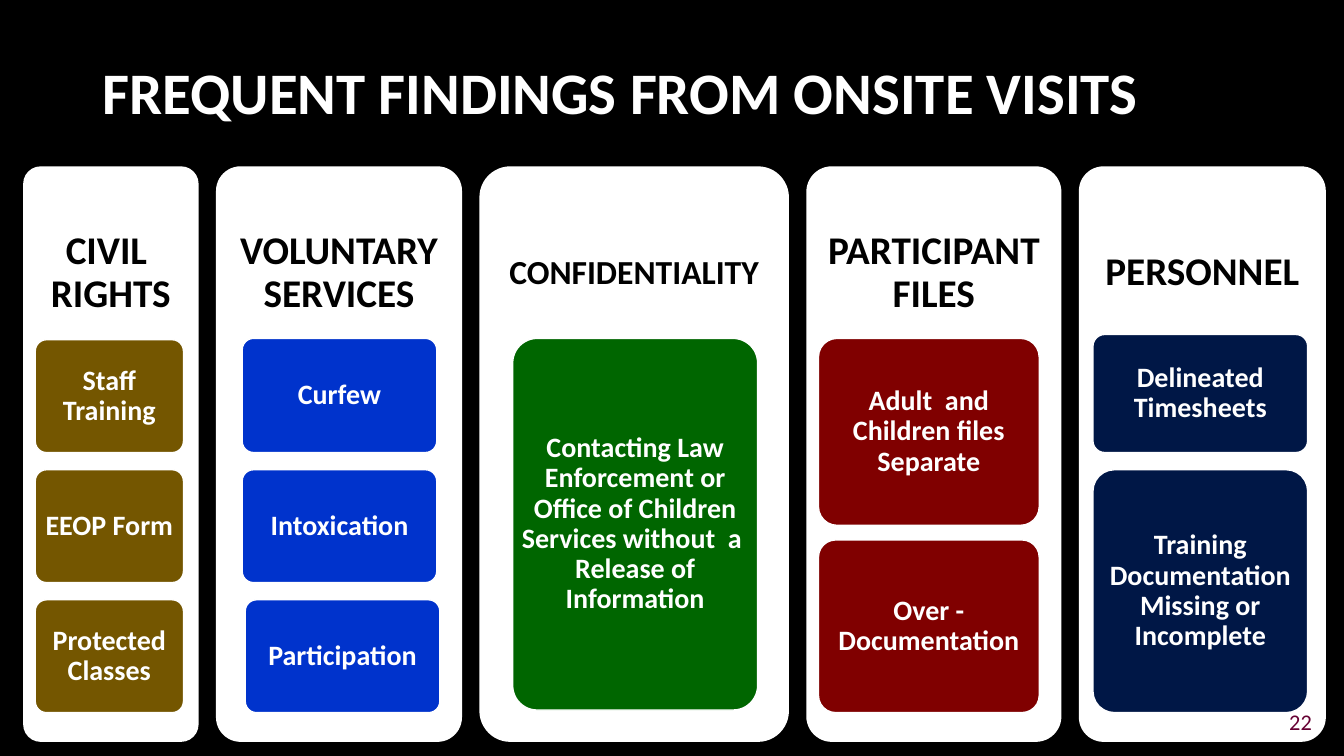
from pptx import Presentation
from pptx.dml.color import RGBColor
from pptx.enum.shapes import MSO_SHAPE
from pptx.enum.text import MSO_ANCHOR, PP_ALIGN
from pptx.util import Inches, Pt

ROUND = MSO_SHAPE.ROUNDED_RECTANGLE
MIDDLE = MSO_ANCHOR.MIDDLE
LEFT, CENTER, RIGHT = PP_ALIGN.LEFT, PP_ALIGN.CENTER, PP_ALIGN.RIGHT

WIDE, HIGH = 13.33, 7.5
BLACK, WHITE, PLUM = "000000", "FFFFFF", "660033"
TITLE = "FREQUENT FINDINGS FROM ONSITE VISITS"
PAGE = "22"

# Panel: heading lines, heading size, width, box indent, box width, colour,
# boxes as (text, first row, rows, shift)
PANELS = [
    (["CIVIL ", "RIGHTS"], 28, 1.74, 0.12, 1.47, "745600", [
        ("Staff Training", 0, 1, 0),
        ("EEOP Form", 1, 1, 0),
        ("Protected Classes", 2, 1, 0)]),
    (["VOLUNTARY SERVICES"], 28, 2.44, 0.26, 1.93, "0033CC", [
        ("Curfew", -0.01, 1.01, 0),
        ("Intoxication", 1, 1, 0),
        ("Participation", 2, 1, 0.03)]),
    (["CONFIDENTIALITY"], 24, 3.07, 0.33, 2.43, "006600", [
        ("Contacting Law Enforcement or Office of Children Services "
         "without  a  Release of Information", -0.01, 2.99, 0)]),
    (["PARTICIPANT FILES"], 28, 2.53, 0.12, 2.19, "800000", [
        ("Adult  and Children files Separate", -0.01, 1.57, 0),
        ("Over - Documentation", 1.54, 1.46, 0)]),
    (["PERSONNEL"], 28, 2.45, 0.14, 2.13, "001746", [
        ("Delineated Timesheets", -0.04, 1.04, 0),
        ("Training Documentation Missing or Incomplete", 1, 2, 0)]),
]
START, END, TOP, TALL = 0.23, 13.15, 1.65, 5.71
ROW_TOP, PITCH, ROW_GAP = 3.37, 1.29, 0.17
HEAD_LOW, CORNER, INSET = 3.67, 0.1, 0.08
CUT = 0.29


def paint(text):
    """Return the colour for a hex string."""
    return RGBColor.from_string(text)


def write(frame, lines, size, hue, align=CENTER, bold=True, space=0.9):
    """Fill a text frame with one paragraph per line."""
    frame.word_wrap = True
    frame.vertical_anchor = MIDDLE
    for i, line in enumerate(lines):
        para = frame.add_paragraph() if i else frame.paragraphs[0]
        para.alignment = align
        para.line_spacing = space
        run = para.add_run()
        run.text = line
        run.font.name = "Calibri"
        run.font.size = Pt(size)
        run.font.bold = bold
        run.font.color.rgb = paint(hue)


def label(slide, area, text, size, hue, **look):
    """Add a plain text box."""
    box = slide.shapes.add_textbox(*map(Inches, area))
    write(box.text_frame, [text], size, hue, **look)


def card(slide, area, fill, lines, size, hue, low=INSET, edge=None):
    """Add a rounded card whose text keeps an even inset."""
    shape = slide.shapes.add_shape(ROUND, *map(Inches, area))
    shape.shadow.inherit = False
    shape.adjustments[0] = CORNER
    shape.fill.solid()
    shape.fill.fore_color.rgb = paint(fill)
    if edge:
        shape.line.color.rgb = paint(edge)
        shape.line.width = Pt(1)
    else:
        shape.line.fill.background()
    bend = CUT * CORNER * min(area[2:])
    frame = shape.text_frame
    frame.margin_left = frame.margin_right = Inches(INSET - bend)
    frame.margin_top = Inches(INSET - bend)
    frame.margin_bottom = Inches(low - bend)
    write(frame, lines, size, hue)


def main():
    """Build the slide and save it."""
    deck = Presentation()
    deck.slide_width, deck.slide_height = Inches(WIDE), Inches(HIGH)
    slide = deck.slides.add_slide(deck.slide_layouts[6])
    slide.background.fill.solid()
    slide.background.fill.fore_color.rgb = paint(BLACK)
    label(slide, (0.92, 0.22, 11.5, 1.45), TITLE, 42, WHITE, align=LEFT)

    gap = (END - START - sum(p[2] for p in PANELS)) / (len(PANELS) - 1)
    x = START
    for head, size, wide, dent, span, hue, boxes in PANELS:
        card(slide, (x, TOP, wide, TALL), WHITE, head, size, BLACK, HEAD_LOW)
        for text, row, rows, shift in boxes:
            area = (x + dent + shift, ROW_TOP + row * PITCH,
                    span, rows * PITCH - ROW_GAP)
            card(slide, area, hue, [text], 20, WHITE, edge=WHITE)
        x += wide + gap

    label(slide, (10.11, 6.96, 3, 0.4), PAGE, 16, PLUM,
          align=RIGHT, bold=False, space=1.0)
    deck.save("out.pptx")


if __name__ == "__main__":
    main()
